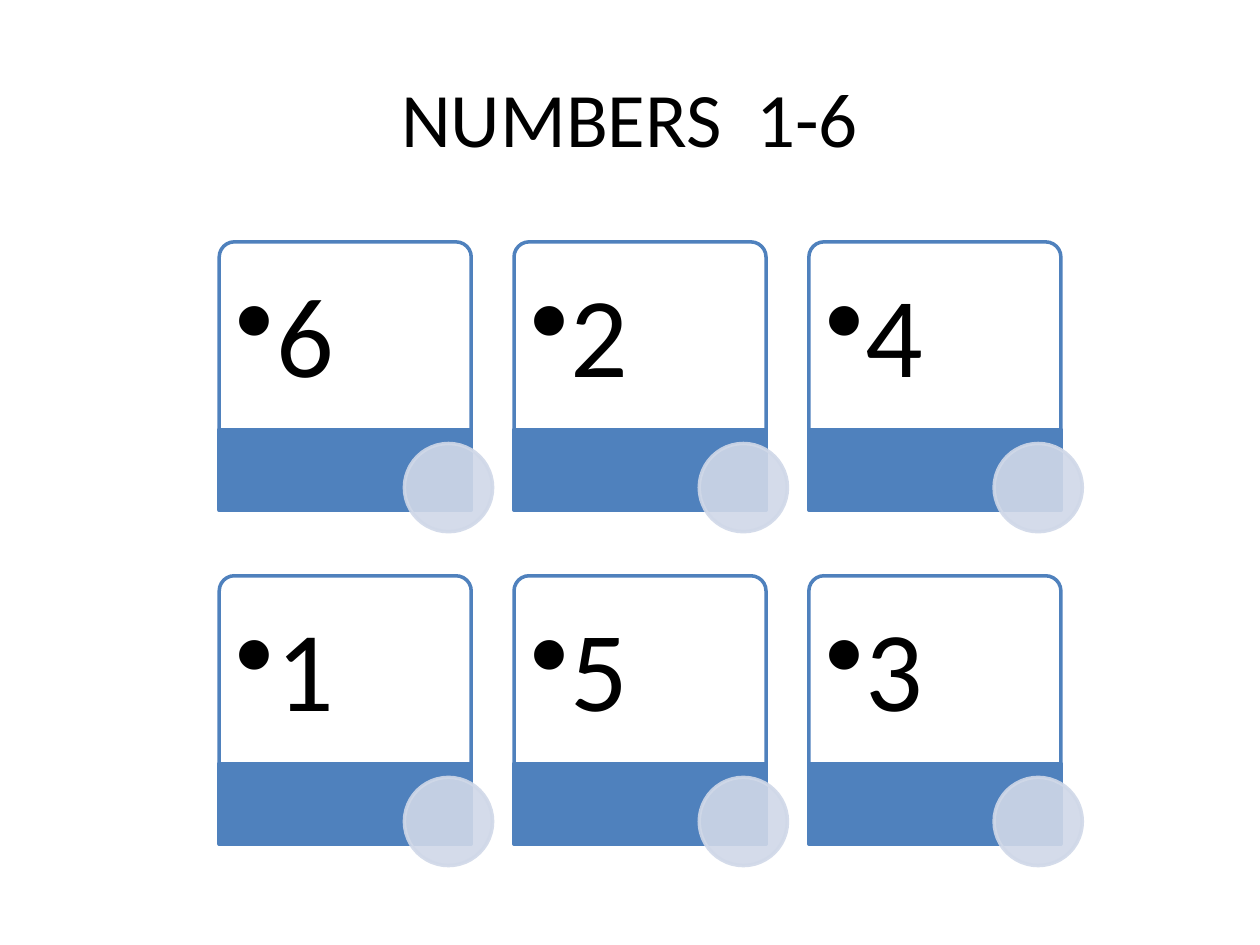
"""Build the slide of six number cards."""
from lxml import etree
from pptx import Presentation
from pptx.dml.color import RGBColor
from pptx.enum.shapes import MSO_SHAPE
from pptx.enum.text import MSO_ANCHOR, PP_ALIGN
from pptx.oxml.ns import qn
from pptx.util import Inches, Pt

CARD = MSO_SHAPE.ROUND_2_SAME_RECTANGLE
BAR = MSO_SHAPE.RECTANGLE
DISC = MSO_SHAPE.OVAL
MIDDLE, TOP = MSO_ANCHOR.MIDDLE, MSO_ANCHOR.TOP
CENTER, LEFT = PP_ALIGN.CENTER, PP_ALIGN.LEFT

TITLE = "NUMBERS  1-6"
ROWS = [["6", "2", "4"], ["1", "5", "3"]]

THEME = {
    "font": "Calibri", "ink": "000000", "paper": "FFFFFF",
    "blue": "4F81BD", "pale": "D0D8E8",
    "title": 44, "digit": 65, "line": 2,
}
GRID = {"left": 1.74, "top": 1.92, "across": 2.34, "down": 2.65}
PARTS = {
    "card": (0, 0, 2, 1.5),
    "digit": (0.04, 0.03, 1.93, 1.46),
    "bar": (0, 1.49, 2, 0.64),
    "disc": (1.47, 1.6, 0.7, 0.7),
}
FRAME = {
    "word_wrap": True, "vertical_anchor": TOP,
    "margin_left": Inches(0.09), "margin_top": Inches(0.27),
    "margin_right": Inches(0.09), "margin_bottom": Inches(0.09),
}
HEAD = {"word_wrap": True, "vertical_anchor": MIDDLE}


def color(key):
    return RGBColor.from_string(THEME[key])


def assign(item, values):
    for name, value in values.items():
        setattr(item, name, value)


def place(part, x, y):
    left, top, width, height = PARTS[part]
    return [Inches(n) for n in (x + left, y + top, width, height)]


def fade(node):
    for tone in node.xpath("./a:solidFill/a:srgbClr"):
        etree.SubElement(tone, qn("a:alpha"), val="90000")


def write(frame, text, size, form, align):
    assign(frame, form)
    para = frame.paragraphs[0]
    para.alignment = align
    run = para.add_run()
    run.text = text
    assign(run.font, {"name": THEME["font"], "size": Pt(THEME[size])})
    run.font.color.rgb = color("ink")
    return para


def draw(shapes, kind, box, fill, line):
    shape = shapes.add_shape(kind, *box)
    shape.shadow.inherit = False
    shape.fill.solid()
    shape.fill.fore_color.rgb = color(fill)
    shape.line.color.rgb = color(line)
    shape.line.width = Pt(THEME["line"])
    return shape


def add_digit(shapes, box, text):
    para = write(shapes.add_textbox(*box).text_frame, text, "digit", FRAME, LEFT)
    assign(para, {"level": 1, "line_spacing": 0.9})
    props = para._p.get_or_add_pPr()
    props.set("marL", str(Inches(0.31)))
    props.set("indent", str(Inches(-0.31)))
    etree.SubElement(props, qn("a:buChar"), char="•")


def add_card(shapes, x, y, text):
    card = draw(shapes, CARD, place("card", x, y), "paper", "blue")
    card.adjustments[0], card.adjustments[1] = 0.08, 0
    fade(card._element.spPr)
    add_digit(shapes, place("digit", x, y), text)
    draw(shapes, BAR, place("bar", x, y), "blue", "blue")
    disc = draw(shapes, DISC, place("disc", x, y), "pale", "pale")
    fade(disc._element.spPr)
    fade(disc._element.spPr.ln)


def main():
    deck = Presentation()
    assign(deck, {"slide_width": Inches(10), "slide_height": Inches(7.5)})
    slide = deck.slides.add_slide(deck.slide_layouts[5])
    title = slide.shapes.title
    assign(title, {"left": Inches(0.5), "top": Inches(0.3),
                   "width": Inches(9), "height": Inches(1.25)})
    write(title.text_frame, TITLE, "title", HEAD, CENTER)
    for row, digits in enumerate(ROWS):
        for col, text in enumerate(digits):
            x = GRID["left"] + col * GRID["across"]
            y = GRID["top"] + row * GRID["down"]
            add_card(slide.shapes, x, y, text)
    deck.save("out.pptx")


if __name__ == "__main__":
    main()
